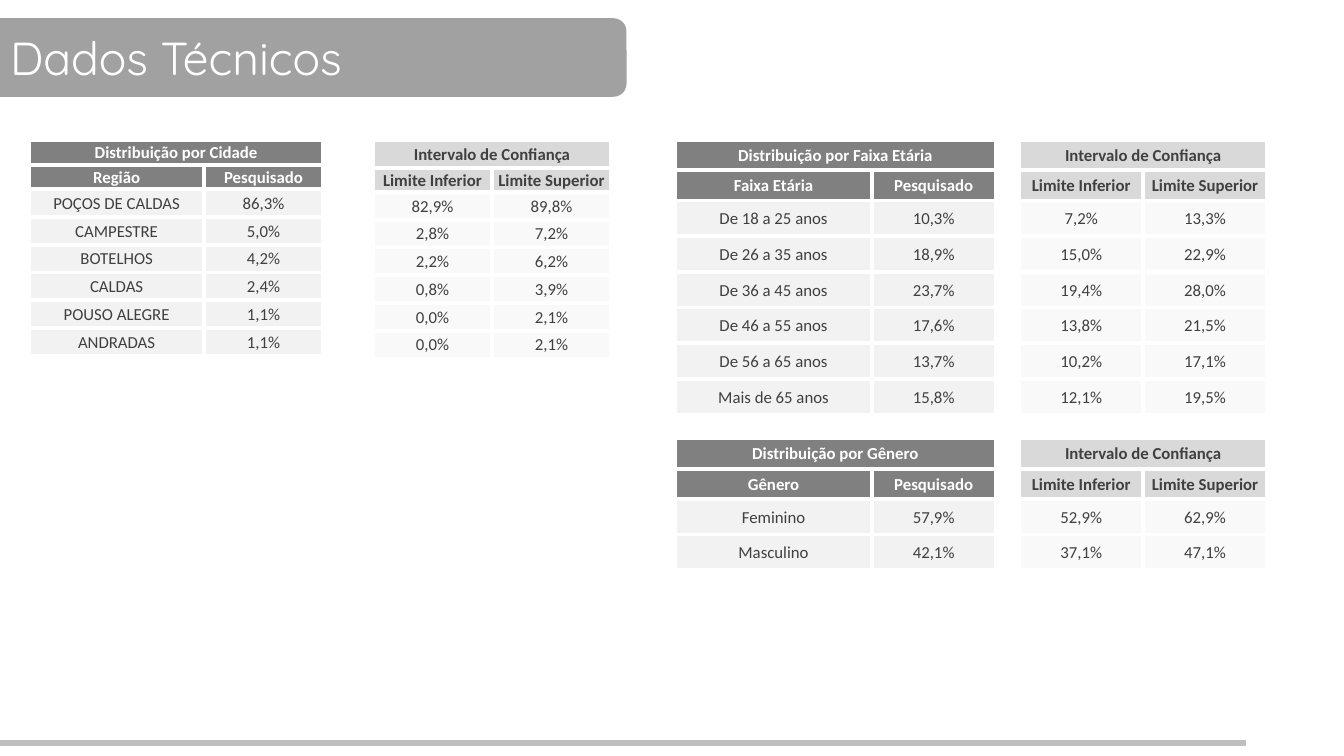
from lxml.etree import SubElement
from pptx import Presentation
from pptx.dml.color import RGBColor
from pptx.enum.shapes import MSO_CONNECTOR as Connector, MSO_SHAPE as Shape
from pptx.enum.text import MSO_ANCHOR as Anchor, MSO_AUTO_SIZE as AutoSize, PP_ALIGN as Align
from pptx.oxml.ns import qn
from pptx.util import Cm, Pt

WHITE, INK, BANNER, RULE = "FFFFFF", "404040", "A1A1A1", "BFBFBF"
# Column looks: heading fill, heading text colour, body fill
SURVEY = ("808080", WHITE, "F2F2F2")
INTERVAL = ("D9D9D9", INK, "F9F9F9")
TABLE_TOP = 3.53

LIMITS = ["Limite Inferior", "Limite Superior"]
CITY_ROWS = [
    ["Distribuição por Cidade", ""],
    ["Região", "Pesquisado"],
    ["POÇOS DE CALDAS", "86,3%"],
    ["CAMPESTRE", "5,0%"],
    ["BOTELHOS", "4,2%"],
    ["CALDAS", "2,4%"],
    ["POUSO ALEGRE", "1,1%"],
    ["ANDRADAS", "1,1%"],
]
CITY_LIMIT_ROWS = [
    ["Intervalo de Confiança", ""],
    LIMITS,
    ["82,9%", "89,8%"],
    ["2,8%", "7,2%"],
    ["2,2%", "6,2%"],
    ["0,8%", "3,9%"],
    ["0,0%", "2,1%"],
    ["0,0%", "2,1%"],
]
PROFILE_ROWS = [
    ["Distribuição por Faixa Etária", "", "", "Intervalo de Confiança", ""],
    ["Faixa Etária", "Pesquisado", "", *LIMITS],
    ["De 18 a 25 anos", "10,3%", "", "7,2%", "13,3%"],
    ["De 26 a 35 anos", "18,9%", "", "15,0%", "22,9%"],
    ["De 36 a 45 anos", "23,7%", "", "19,4%", "28,0%"],
    ["De 46 a 55 anos", "17,6%", "", "13,8%", "21,5%"],
    ["De 56 a 65 anos", "13,7%", "", "10,2%", "17,1%"],
    ["Mais de 65 anos", "15,8%", "", "12,1%", "19,5%"],
    [""] * 5,
    ["Distribuição por Gênero", "", "", "Intervalo de Confiança", ""],
    ["Gênero", "Pesquisado", "", *LIMITS],
    ["Feminino", "57,9%", "", "52,9%", "62,9%"],
    ["Masculino", "42,1%", "", "37,1%", "47,1%"],
]


def rgb(hex_code):
    return RGBColor.from_string(hex_code)


def write(frame, text, font="Calibri", size=12, color=INK, bold=False, align=Align.CENTER):
    paragraph = frame.paragraphs[0]
    paragraph.alignment = align
    if not text:  # keeps an empty cell from growing its row
        SubElement(paragraph._p, qn("a:endParaRPr"), sz=str(size * 100))
        return
    run = paragraph.add_run()
    run.text = text
    run.font.name, run.font.size, run.font.bold = font, Pt(size), bold
    run.font.color.rgb = rgb(color)


def add_cell_borders(cell):
    properties = cell._tc.get_or_add_tcPr()
    for position, side in enumerate(("lnL", "lnR", "lnT", "lnB")):
        border = SubElement(properties, qn(f"a:{side}"), w=str(Pt(3)))
        fill = SubElement(border, qn("a:solidFill"))
        SubElement(fill, qn("a:srgbClr"), val=WHITE)
        properties.insert(position, border)


def add_distribution(slide, left, widths, heights, rows, looks, headings=(0, 1), merges=()):
    table = slide.shapes.add_table(len(rows), len(widths), Cm(left), Cm(TABLE_TOP),
                                   Cm(sum(widths)), Cm(sum(heights))).table
    table.first_row = table.horz_banding = False
    for column, width in zip(table.columns, widths):
        column.width = Cm(width)
    for row, height in zip(table.rows, heights):
        row.height = Cm(height)

    for r, texts in enumerate(rows):
        for c, (text, look) in enumerate(zip(texts, looks)):
            cell = table.cell(r, c)
            cell.vertical_anchor = Anchor.MIDDLE
            cell.margin_left = cell.margin_right = cell.margin_top = Cm(0.03)
            cell.margin_bottom = 0
            heading = r in headings
            if text:
                head_fill, head_color, body_fill = look
                cell.fill.solid()
                cell.fill.fore_color.rgb = rgb(head_fill if heading else body_fill)
                write(cell.text_frame, text, bold=heading,
                      color=head_color if heading else INK)
            else:
                cell.fill.background()
                write(cell.text_frame, text)
            add_cell_borders(cell)

    for first, last in merges:
        table.cell(*first).merge(table.cell(*last))


def add_banner(slide, left, top, width, height):
    banner = slide.shapes.add_shape(Shape.ROUNDED_RECTANGLE,
                                    Cm(left), Cm(top), Cm(width), Cm(height))
    banner.shadow.inherit = False
    banner.fill.solid()
    banner.fill.fore_color.rgb = rgb(BANNER)
    banner.line.fill.background()


def add_rule(slide, y, end):
    rule = slide.shapes.add_connector(Connector.STRAIGHT, 0, Cm(y), Cm(end), Cm(y))
    rule.line.color.rgb = rgb(RULE)
    rule.line.width = Pt(4.5)
    SubElement(rule._element.spPr, qn("a:effectLst"))


def set_title(slide, text, left, top, width, height):
    title = slide.shapes.title
    title.left, title.top, title.width, title.height = Cm(left), Cm(top), Cm(width), Cm(height)
    frame = title.text_frame
    frame.word_wrap, frame.auto_size = True, AutoSize.NONE
    frame.vertical_anchor = Anchor.MIDDLE
    write(frame, text, font="Quicksand", size=33, color=WHITE, align=Align.LEFT)
    # Bring the title in front of the banner
    slide.shapes._spTree.append(title._element)


def main():
    deck = Presentation()
    deck.slide_width, deck.slide_height = Cm(33.87), Cm(19.05)
    slide = deck.slides.add_slide(deck.slide_layouts[5])

    # Frame of the page
    add_banner(slide, -0.69, 0.46, 16.48, 1.98)
    add_rule(slide, 18.72, 31.4)

    # Cities and their confidence interval
    add_distribution(slide, 0.74, [4.4, 3], [0.62] * 2 + [0.7] * 6, CITY_ROWS,
                     [SURVEY] * 2, merges=[((0, 0), (0, 1))])
    add_distribution(slide, 9.4, [3, 3], [0.7, 0.61] + [0.7] * 6, CITY_LIMIT_ROWS,
                     [INTERVAL] * 2, merges=[((0, 0), (0, 1))])

    # Age groups and gender, each beside its confidence interval
    wide_cells = [((r, c), (r, c + 1)) for r in (0, 8, 9) for c in (0, 3)]
    gap_cells = [((0, 2), (1, 2)), ((8, 2), (10, 2))]
    add_distribution(slide, 17.02, [4.95, 3.12, 0.6, 3.12, 3.12],
                     [0.76] * 2 + [0.9] * 6 + [0.6] + [0.76] * 2 + [0.9] * 2,
                     PROFILE_ROWS, [SURVEY] * 2 + [None] + [INTERVAL] * 2,
                     headings=(0, 1, 9, 10), merges=wide_cells + gap_cells)

    set_title(slide, "Dados Técnicos", 0, 0.46, 13.5, 1.98)
    deck.save("out.pptx")


if __name__ == "__main__":
    main()
